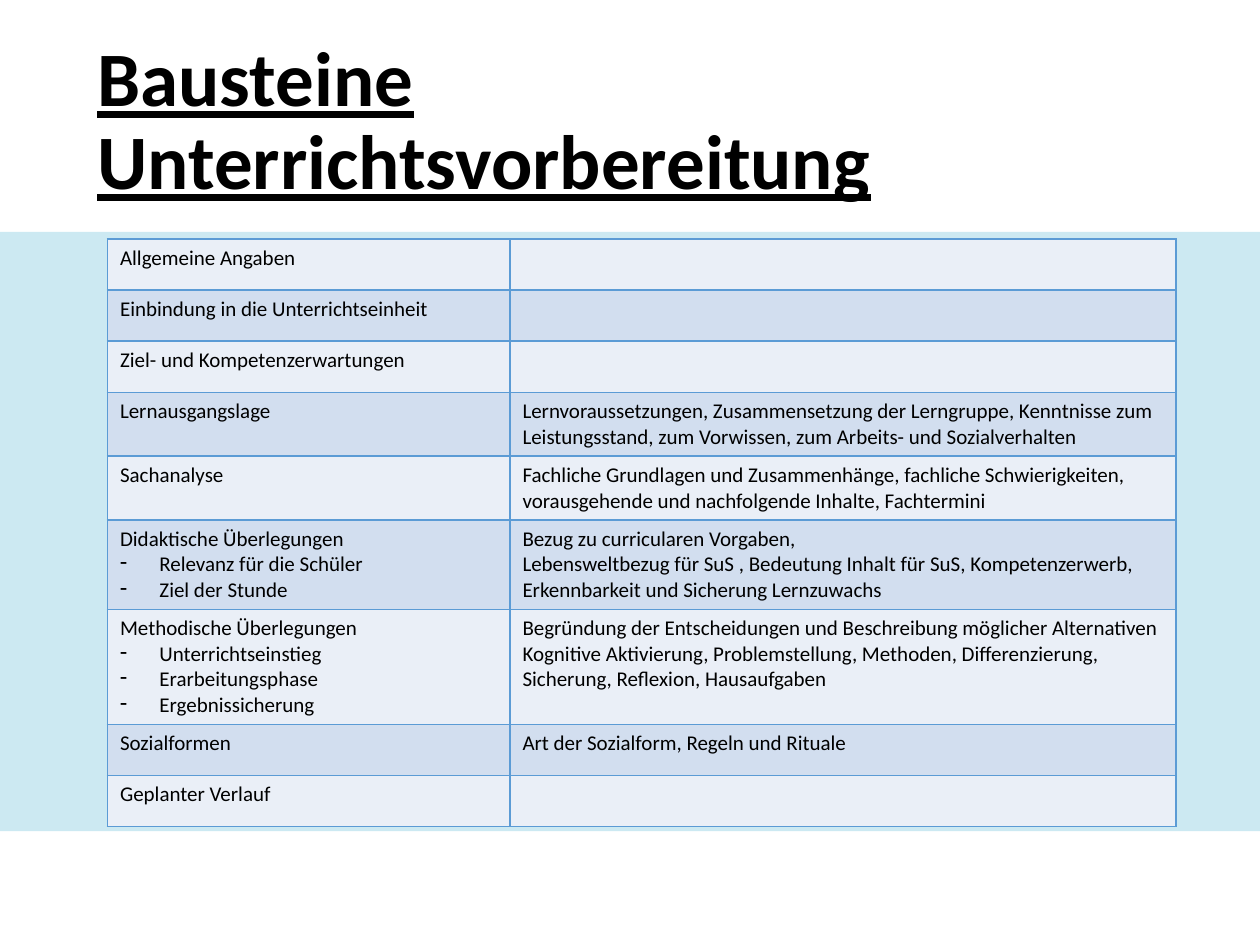
from dataclasses import dataclass

from lxml.etree import SubElement
from pptx import Presentation
from pptx.dml.color import RGBColor
from pptx.enum.shapes import MSO_SHAPE
from pptx.enum.text import MSO_ANCHOR, MSO_AUTO_SIZE, PP_ALIGN
from pptx.oxml.ns import qn
from pptx.slide import Slide
from pptx.table import _Cell
from pptx.text.text import _Paragraph
from pptx.util import Pt


@dataclass(frozen=True)
class Theme:
    font: str = "Calibri"
    ink: str = "000000"
    band: str = "CCE9F2"
    rule: str = "5B9BD5"
    fills: tuple[str, str] = ("EAEFF7", "D2DEEF")
    head: int = 44
    body: int = 12


@dataclass(frozen=True)
class Block:
    name: str
    steps: tuple[str, ...] = ()
    notes: tuple[str, ...] = ()


THEME = Theme()
BLOCKS = [
    Block("Allgemeine Angaben"),
    Block("Einbindung in die Unterrichtseinheit"),
    Block("Ziel- und Kompetenzerwartungen"),
    Block("Lernausgangslage", notes=(
        "Lernvoraussetzungen, Zusammensetzung der Lerngruppe, Kenntnisse zum "
        "Leistungsstand, zum Vorwissen, zum Arbeits- und Sozialverhalten",)),
    Block("Sachanalyse", notes=(
        "Fachliche Grundlagen und Zusammenhänge, fachliche Schwierigkeiten, "
        "vorausgehende und nachfolgende Inhalte, Fachtermini",)),
    Block("Didaktische Überlegungen",
          ("Relevanz für die Schüler", "Ziel der Stunde"),
          ("Bezug zu curricularen Vorgaben,",
           "Lebensweltbezug für SuS , Bedeutung Inhalt für SuS, "
           "Kompetenzerwerb, Erkennbarkeit und Sicherung Lernzuwachs")),
    Block("Methodische Überlegungen",
          ("Unterrichtseinstieg", "Erarbeitungsphase", "Ergebnissicherung"),
          ("Begründung der Entscheidungen und Beschreibung möglicher "
           "Alternativen",
           "Kognitive Aktivierung, Problemstellung, Methoden, "
           "Differenzierung, Sicherung, Reflexion, Hausaufgaben")),
    Block("Sozialformen", notes=("Art der Sozialform, Regeln und Rituale",)),
    Block("Geplanter Verlauf"),
]


def style(para: _Paragraph, size: int, strong: bool = False) -> None:
    for run in para.runs:
        font = run.font
        font.name = THEME.font
        font.size = Pt(size)
        font.bold = strong
        font.underline = strong
        font.color.rgb = RGBColor.from_string(THEME.ink)


def dash(para: _Paragraph) -> None:
    props = para._p.get_or_add_pPr()
    props.set("marL", str(Pt(22.5)))
    props.set("indent", str(Pt(-22.5)))
    SubElement(props, qn("a:buFontTx"))
    SubElement(props, qn("a:buChar"), char="-")


def frame(cell: _Cell) -> None:
    props = cell._tc.get_or_add_tcPr()
    for side in ("L", "R", "T", "B"):
        line = SubElement(props, qn(f"a:ln{side}"), w=str(Pt(1)))
        fill = SubElement(line, qn("a:solidFill"))
        SubElement(fill, qn("a:srgbClr"), val=THEME.rule)


def write(cell: _Cell, lines: tuple[str, ...], fill: str,
          listed: bool = False) -> None:
    frame(cell)
    cell.fill.solid()
    cell.fill.fore_color.rgb = RGBColor.from_string(fill)
    text = cell.text_frame
    text.text = "\n".join(lines)
    for spot, para in enumerate(text.paragraphs):
        if listed and spot:
            dash(para)
        style(para, THEME.body)


def add_head(slide: Slide, words: str) -> None:
    title = slide.shapes.title
    title.left, title.top = Pt(48.5), Pt(18)
    title.width, title.height = Pt(623.5), Pt(105)
    text = title.text_frame
    text.text = words
    text.word_wrap = True
    text.auto_size = MSO_AUTO_SIZE.NONE
    text.vertical_anchor = MSO_ANCHOR.MIDDLE
    para = text.paragraphs[0]
    para.alignment = PP_ALIGN.LEFT
    para.line_spacing = 0.9
    style(para, THEME.head, True)


def add_band(slide: Slide) -> None:
    band = slide.shapes.add_shape(
        MSO_SHAPE.RECTANGLE, Pt(0), Pt(132.5), Pt(720), Pt(342.5))
    band.shadow.inherit = False
    band.fill.solid()
    band.fill.fore_color.rgb = RGBColor.from_string(THEME.band)
    band.line.fill.background()
    slide.shapes.title.element.addprevious(band.element)


def add_grid(slide: Slide, blocks: list[Block]) -> None:
    widths = (Pt(230), Pt(380.5))
    high = Pt(29.2)
    grid = slide.shapes.add_table(
        len(blocks), 2, Pt(61.4), Pt(136.6), sum(widths),
        high * len(blocks)).table
    grid.first_row = False
    grid.horz_banding = False
    for col, width in zip(grid.columns, widths):
        col.width = width
    for spot, block in enumerate(blocks):
        grid.rows[spot].height = high
        fill = THEME.fills[spot % 2]
        write(grid.cell(spot, 0), (block.name, *block.steps), fill, True)
        write(grid.cell(spot, 1), block.notes, fill)


def main() -> None:
    deck = Presentation()
    deck.slide_width, deck.slide_height = Pt(720), Pt(540)
    slide = deck.slides.add_slide(deck.slide_layouts[5])
    add_head(slide, "Bausteine Unterrichtsvorbereitung")
    add_band(slide)
    add_grid(slide, BLOCKS)
    deck.save("out.pptx")


if __name__ == "__main__":
    main()
